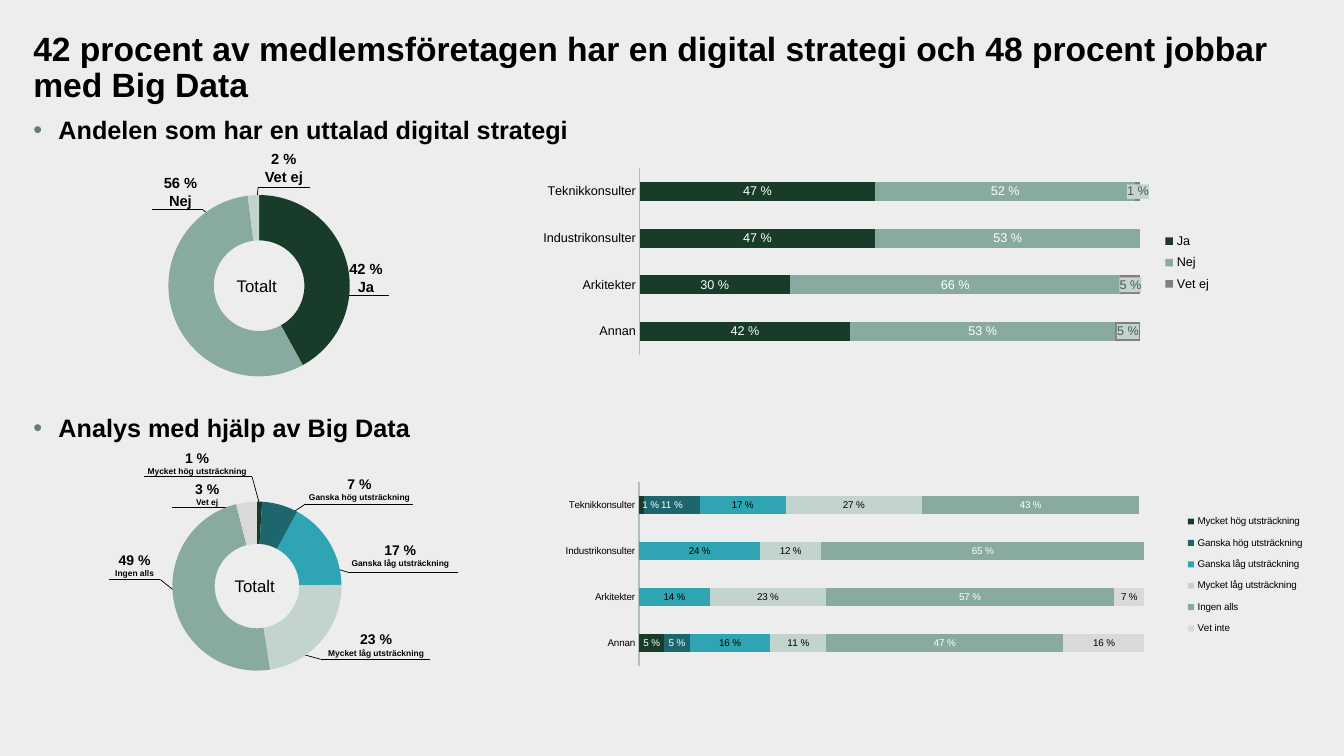
from collections import namedtuple
from copy import deepcopy

from lxml.etree import SubElement
from pptx import Presentation
from pptx.chart.data import CategoryChartData
from pptx.dml.color import RGBColor
from pptx.enum.chart import XL_CHART_TYPE, XL_LABEL_POSITION, XL_LEGEND_POSITION, XL_TICK_MARK
from pptx.enum.shapes import MSO_CONNECTOR
from pptx.enum.text import PP_ALIGN
from pptx.oxml import parse_xml
from pptx.oxml.ns import nsdecls, qn
from pptx.util import Inches, Pt

COLS, ROWS = 1333, 750  # the slide grid
FIRMS = ["Teknikkonsulter", "Industrikonsulter", "Arkitekter", "Annan"]
Box = namedtuple("Box", "x y w h")
Call = namedtuple("Call", "head note x y w left right rule tip")
Band = namedtuple("Band", "name values fill ink plate nudge", defaults=[None, None])


class T:
    """Theme: colours, fonts and type sizes."""
    back, ink, white, bullet, axis = "EDEDED", "000000", "FFFFFF", "657B71", "B0BFB7"
    dark, teal, aqua, pale = "193C2A", "1D666E", "2FA5B3", "C3D4CF"
    sage, light, gray, slate = "88AAA0", "D9D9D9", "808080", "455A5A"
    face, alt = "Arial", "Lato"
    title, head, core = 24, 18, 12


def grid(*cells):
    return [Inches(cell / 100) for cell in cells]


def apply(target, values):
    for key, value in values.items():
        setattr(target, key, value)


def style(font, size, color=T.ink, bold=False, face=T.face):
    apply(font, {"size": Pt(size), "bold": bold, "name": face})
    font.color.rgb = RGBColor.from_string(color)


def paint(fill, color):
    fill.solid()
    fill.fore_color.rgb = RGBColor.from_string(color)


def write(slide, box, lines, align=PP_ALIGN.LEFT):
    """Add a text box; lines are (text, size, bold)."""
    frame = slide.shapes.add_textbox(*grid(*box)).text_frame
    frame.word_wrap = False
    for i, (text, size, bold) in enumerate(lines):
        para = frame.add_paragraph() if i else frame.paragraphs[0]
        para.alignment = align
        run = para.add_run()
        run.text = text
        style(run.font, size, bold=bold)
    return frame


def title(slide, box, text, size=T.title):
    frame = write(slide, box, [(text, size, True)])
    apply(frame, {"word_wrap": True, "margin_left": 0, "margin_right": 0,
                  "margin_top": 0, "margin_bottom": 0})
    frame.paragraphs[0].line_spacing = 0.9
    return frame.paragraphs[0]


def heading(slide, box, text):
    props = title(slide, box, text, T.head)._p.get_or_add_pPr()
    props.set("marL", str(Inches(0.25)))
    props.set("indent", str(-Inches(0.25)))
    SubElement(SubElement(props, qn("a:buClr")), qn("a:srgbClr")).set("val", T.bullet)
    SubElement(props, qn("a:buFont")).set("typeface", T.face)
    SubElement(props, qn("a:buChar")).set("char", "•")


def stroke(slide, start, end):
    line = slide.shapes.add_connector(MSO_CONNECTOR.STRAIGHT, *grid(*start, *end))
    line.line.width = Pt(0.5)
    line.line.color.rgb = RGBColor.from_string(T.ink)
    SubElement(line.element.spPr, qn("a:effectLst"))


def place(root, at, spot, head=""):
    """Give a chart part a manual layout, as its child number at."""
    for old in root.findall(qn("c:layout")):
        root.remove(old)
    sizes = "".join(f'<c:{key} val="{val:.3f}"/>' for key, val in zip("xywh", spot))
    root.insert(at, parse_xml(f'<c:layout {nsdecls("c")}><c:manualLayout>{head}{sizes}'
                              '</c:manualLayout></c:layout>'))


EDGE = '<c:xMode val="edge"/><c:yMode val="edge"/>'


def chart(slide, box, kind, cats, series, plot, size, face=T.face):
    """Add a clear chart with its plot area at the given shares."""
    data = CategoryChartData()
    data.categories = cats
    for name, values in series:
        data.add_series(name, values)
    graph = slide.shapes.add_chart(kind, *grid(*box), data).chart
    graph.has_title = graph.has_legend = False
    style(graph.font, size, face=face)
    graph.element.find(qn("c:chart")).addnext(parse_xml(
        f'<c:spPr {nsdecls("c", "a")}><a:noFill/><a:ln><a:noFill/></a:ln></c:spPr>'))
    area, = graph.element.xpath(".//c:plotArea")
    place(area, 0, plot, '<c:layoutTarget val="inner"/>' + EDGE)
    return graph


def ring(slide, box, values, fills, calls, sizes, face=T.face):
    """Doughnut over its callouts, which are offset from its box."""
    for call in calls:
        write(slide, (box.x + call.x, box.y + call.y, call.w, 40),
              [(call.head, sizes[0], True), (call.note, sizes[1], True)], PP_ALIGN.CENTER)
        y = box.y + call.rule
        stroke(slide, (box.x + call.left, y), (box.x + call.right, y))
        if call.tip:
            bend = min(call.left, call.right, key=lambda x: abs(x - call.tip[0]))
            stroke(slide, (box.x + bend, y), (box.x + call.tip[0], box.y + call.tip[1]))
    write(slide, (box.x + box.w / 2 - 32, box.y + box.h / 2 - 15, 60, 30),
          [("Totalt", T.core, False)])
    high = 0.87
    wide = high * box.h / box.w
    body = chart(slide, box, XL_CHART_TYPE.DOUGHNUT, [str(i + 1) for i in range(len(values))],
                 [("Series 1", values)], ((1 - wide) / 2, (1 - high) / 2, wide, high),
                 10, face).plots[0]
    body.vary_by_categories = True
    for i, fill in enumerate(fills):
        paint(body.series[0].points[i].format.fill, fill)


def label(series, band, size):
    """Show values at the bar centres, leaving out the zeros."""
    tags = series.data_labels
    apply(tags, {"show_value": True, "position": XL_LABEL_POSITION.CENTER,
                 "number_format": "0\\ %", "number_format_is_linked": False})
    style(tags.font, size, band.ink)
    root = tags._element
    if band.plate:
        root.find(qn("c:txPr")).addprevious(parse_xml(
            f'<c:spPr {nsdecls("c", "a")}><a:solidFill><a:srgbClr val="{band.plate}"/>'
            '</a:solidFill></c:spPr>'))
    shared = [deepcopy(node) for node in root]
    for i in reversed(range(len(band.values))):
        tag = parse_xml(f'<c:dLbl {nsdecls("c")}><c:idx val="{i}"/></c:dLbl>')
        if not band.values[i]:
            SubElement(tag, qn("c:delete")).set("val", "1")
        elif i == 0 and band.nudge:
            place(tag, 1, (band.nudge, 0))
            tag.extend(node for node in shared if node.tag != qn("c:showLeaderLines"))
        else:
            continue
        root.insert(0, tag)


def bars(slide, box, bands, plot, key, size):
    """Stacked bars by type of firm, with a legend at the key shares."""
    graph = chart(slide, box, XL_CHART_TYPE.BAR_STACKED, FIRMS,
                  [(band.name, band.values) for band in bands], plot, size)
    body, cat, val = graph.plots[0], graph.category_axis, graph.value_axis
    apply(body, {"gap_width": 150, "overlap": 100, "vary_by_categories": False})
    for series, band in zip(body.series, bands):
        paint(series.format.fill, band.fill)
        label(series, band, size)
    apply(cat, {"reverse_order": True, "major_tick_mark": XL_TICK_MARK.NONE,
                "minor_tick_mark": XL_TICK_MARK.NONE})
    cat.format.line.width = Pt(0.75)
    cat.format.line.color.rgb = RGBColor.from_string(T.axis)
    style(cat.tick_labels.font, size)
    apply(val, {"minimum_scale": 0, "maximum_scale": 1, "visible": False,
                "has_major_gridlines": False})
    val.tick_labels.number_format = "0.00%"
    graph.has_legend = True
    apply(graph.legend, {"position": XL_LEGEND_POSITION.RIGHT, "include_in_layout": False})
    style(graph.legend.font, size)
    place(graph.element.xpath(".//c:legend")[0], 1, key, EDGE)


def main():
    deck = Presentation()
    deck.slide_width, deck.slide_height = grid(COLS, ROWS)
    slide = deck.slides.add_slide(deck.slide_layouts[6])
    paint(slide.background.fill, T.back)
    title(slide, Box(33, 32, 1268, 56), "42 procent av medlemsföretagen har en "
          "digital strategi och 48 procent jobbar med Big Data")
    heading(slide, Box(33, 117, 1268, 38), "Andelen som har en uttalad digital strategi")
    heading(slide, Box(33, 412, 1268, 38), "Analys med hjälp av Big Data")
    bars(slide, Box(448, 153, 829, 213), [
        Band("Ja", (0.47, 0.47, 0.3, 0.42), T.dark, T.white),
        Band("Nej", (0.52, 0.53, 0.66, 0.53), T.sage, T.white),
        Band("Vet ej", (0.01, 0, 0.05, 0.05), T.gray, T.slate, T.pale),
    ], (0.225, 0.066, 0.599, 0.869), (0.84, 0.34, 0.08, 0.33), 9)
    bars(slide, Box(488, 463, 900, 213), [
        Band("Mycket hög utsträckning", (0.01, 0, 0, 0.05), T.dark, T.white, nudge=0.01),
        Band("Ganska hög utsträckning", (0.11, 0, 0, 0.05), T.teal, T.white),
        Band("Ganska låg utsträckning", (0.17, 0.24, 0.14, 0.16), T.aqua, T.ink),
        Band("Mycket låg utsträckning", (0.27, 0.12, 0.23, 0.11), T.pale, T.ink),
        Band("Ingen alls", (0.43, 0.65, 0.57, 0.47), T.sage, T.white),
        Band("Vet inte", (0, 0, 0.07, 0.16), T.light, T.ink),
    ], (0.162, 0.072, 0.557, 0.856), (0.755, 0.18, 0.15, 0.65), 7)
    ring(slide, Box(84, 180, 346, 207), (42, 56, 2), (T.dark, T.sage, T.pale), [
        Call("42 %", "Ja", 252, 73, 54, 251, 302, 113, (226, 106)),
        Call("56 %", "Nej", 68, -12, 54, 67, 117, 28, (142, 47)),
        Call("2 %", "Vet ej", 168, -36, 59, 172, 223, 6, (169, 37))], (10.5, 10.5), T.alt)
    ring(slide, Box(94, 485, 322, 193), (1, 7, 17, 23, 49, 4),
         (T.dark, T.teal, T.aqua, T.pale, T.sage, T.light), [
        Call("1 %", "Mycket hög utsträckning", 42, -44, 119, 49, 156, -12, (165, 21)),
        Call("7 %", "Ganska hög utsträckning", 202, -18, 121, 209, 316, 15, (185, 31)),
        Call("17 %", "Ganska låg utsträckning", 244, 47, 118, 252, 360, 83, (226, 75)),
        Call("23 %", "Mycket låg utsträckning", 221, 136, 116, 224, 332, 169, (198, 162)),
        Call("49 %", "Ingen alls", 9, 57, 61, 14, 65, 90, (89, 109)),
        Call("3 %", "Vet ej", 87, -13, 49, 77, 147, 18, None)], (10, 6))
    deck.save("out.pptx")


if __name__ == "__main__":
    main()
